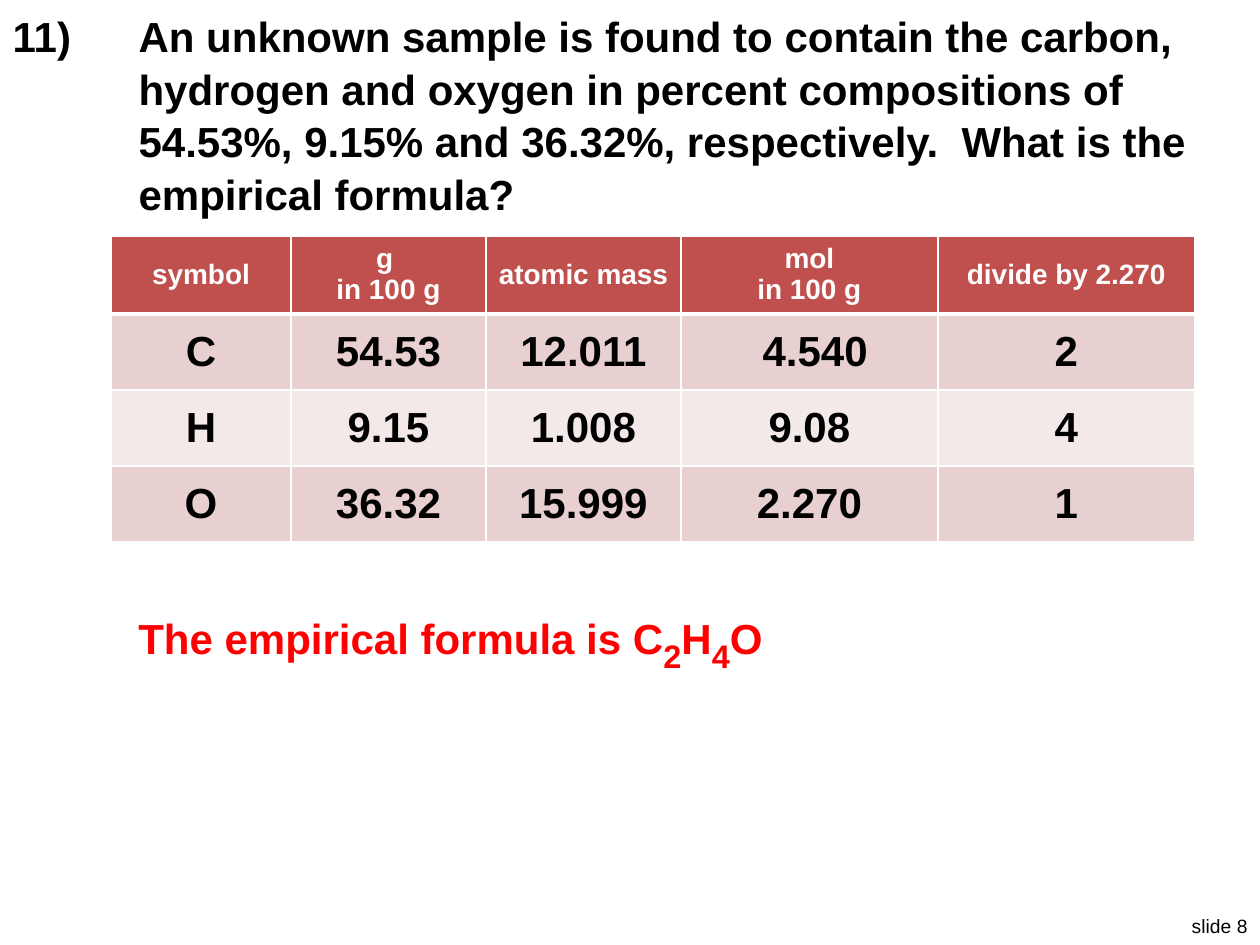
"""Build the empirical formula exercise slide with its worked table."""
from dataclasses import dataclass

from lxml import etree
from pptx import Presentation
from pptx.dml.color import RGBColor
from pptx.enum.text import MSO_ANCHOR, MSO_AUTO_SIZE, PP_ALIGN
from pptx.oxml.ns import qn
from pptx.util import Emu, Pt

LEFT, CENTER, RIGHT = PP_ALIGN.LEFT, PP_ALIGN.CENTER, PP_ALIGN.RIGHT
TOP, MIDDLE = MSO_ANCHOR.TOP, MSO_ANCHOR.MIDDLE
NO_AUTOFIT = MSO_AUTO_SIZE.NONE


@dataclass(frozen=True)
class Theme:
    font: str = "Arial"
    ink: str = "000000"
    answer: str = "FF0000"
    paper: str = "FFFFFF"
    header: str = "C0504D"
    bands: tuple = ("E8D0D0", "F4E9E9")
    body_size: int = 24
    subscript_size: int = 32
    header_size: int = 16
    footer_size: int = 11
    body_spacing: float = 1.04
    header_spacing: float = 0.97
    border: int = 1
    header_rule: int = 3


THEME = Theme()
PX_PER_INCH = 126
SLIDE = (1260, 945)

QUESTION = (
    "11)\tAn unknown sample is found to contain the carbon, hydrogen and oxygen "
    "in percent compositions of 54.53%, 9.15% and 36.32%, respectively.  "
    "What is the empirical formula?"
)
ANSWER = [("The empirical formula is C", False), ("2", True), ("H", False),
          ("4", True), ("O", False)]
SLIDE_NUMBER = "slide 8"
COMPOSITION = [
    ("symbol", "g \nin 100 g", "atomic mass", "mol\nin 100 g", "divide by 2.270"),
    ("C", "54.53", "12.011", " 4.540", "2"),
    ("H", "9.15", "1.008", "9.08", "4"),
    ("O", "36.32", "15.999", "2.270", "1"),
]

QUESTION_BOX = (0, 0, 1260, 174)
ANSWER_BOX = (126, 575, 1134, 63)
NUMBER_BOX = (1166, 908, 94, 36)
TABLE_ORIGIN = (111, 236)
COLUMN_WIDTHS = (180, 195, 195, 257, 257)
ROW_HEIGHTS = (78, 76, 76, 76)
HANGING_INDENT = 126
QUESTION_INSET = 9
ANSWER_INSET = 21


def px(length):
    return Emu(round(length * 914400 / PX_PER_INCH))


def style_run(run, size, color, bold=True):
    run.font.name = THEME.font
    run.font.size = Pt(size)
    run.font.bold = bold
    run.font.color.rgb = RGBColor.from_string(color)


def add_question(slide):
    question = slide.shapes.title
    question.left, question.top, question.width, question.height = map(px, QUESTION_BOX)
    frame = question.text_frame
    frame.text = QUESTION
    frame.auto_size = NO_AUTOFIT
    frame.word_wrap = True
    frame.vertical_anchor = TOP
    frame.margin_top = px(QUESTION_INSET)
    paragraph = frame.paragraphs[0]
    paragraph.alignment = LEFT
    paragraph.line_spacing = THEME.body_spacing
    properties = paragraph._p.get_or_add_pPr()
    properties.set("marL", str(px(HANGING_INDENT)))
    properties.set("indent", str(px(-HANGING_INDENT)))
    for run in paragraph.runs:
        style_run(run, THEME.body_size, THEME.ink)


def add_answer(slide):
    frame = slide.shapes.add_textbox(*map(px, ANSWER_BOX)).text_frame
    frame.word_wrap = True
    frame.margin_top = px(ANSWER_INSET)
    paragraph = frame.paragraphs[0]
    paragraph.line_spacing = THEME.body_spacing
    for text, subscript in ANSWER:
        run = paragraph.add_run()
        run.text = text
        style_run(run, THEME.subscript_size if subscript else THEME.body_size, THEME.answer)
        if subscript:
            run.font._element.set("baseline", "-25000")


def add_slide_number(slide):
    frame = slide.shapes.add_textbox(*map(px, NUMBER_BOX)).text_frame
    frame.word_wrap = False
    frame.text = SLIDE_NUMBER
    paragraph = frame.paragraphs[0]
    paragraph.alignment = RIGHT
    style_run(paragraph.runs[0], THEME.footer_size, THEME.ink, bold=False)


def set_borders(cell, **widths):
    properties = cell._tc.get_or_add_tcPr()
    for side, width in widths.items():
        line = etree.SubElement(properties, qn(f"a:ln{side}"), w=str(Pt(width)))
        fill = etree.SubElement(line, qn("a:solidFill"))
        etree.SubElement(fill, qn("a:srgbClr"), val=THEME.paper)


def style_cell(cell, text, row):
    is_header = row == 0
    rule, border = THEME.header_rule, THEME.border
    set_borders(cell, L=border, R=border,
                T=rule if row == 1 else border,
                B=rule if is_header else border)
    cell.fill.solid()
    cell.fill.fore_color.rgb = RGBColor.from_string(
        THEME.header if is_header else THEME.bands[(row - 1) % 2])
    cell.vertical_anchor = MIDDLE
    cell.text_frame.text = text
    for paragraph in cell.text_frame.paragraphs:
        paragraph.alignment = CENTER
        if is_header:
            paragraph.line_spacing = THEME.header_spacing
        for run in paragraph.runs:
            style_run(run, THEME.header_size if is_header else THEME.body_size,
                      THEME.paper if is_header else THEME.ink)


def add_composition(slide):
    extent = (*TABLE_ORIGIN, sum(COLUMN_WIDTHS), sum(ROW_HEIGHTS))
    composition = slide.shapes.add_table(
        len(ROW_HEIGHTS), len(COLUMN_WIDTHS), *map(px, extent)).table
    for column, width in zip(composition.columns, COLUMN_WIDTHS):
        column.width = px(width)
    for row, height in zip(composition.rows, ROW_HEIGHTS):
        row.height = px(height)
    for row, texts in enumerate(COMPOSITION):
        for column, text in enumerate(texts):
            style_cell(composition.cell(row, column), text, row)


def main():
    deck = Presentation()
    deck.slide_width, deck.slide_height = map(px, SLIDE)
    slide = deck.slides.add_slide(deck.slide_layouts[5])
    add_slide_number(slide)
    add_answer(slide)
    add_question(slide)
    add_composition(slide)
    deck.save("out.pptx")


if __name__ == "__main__":
    main()
